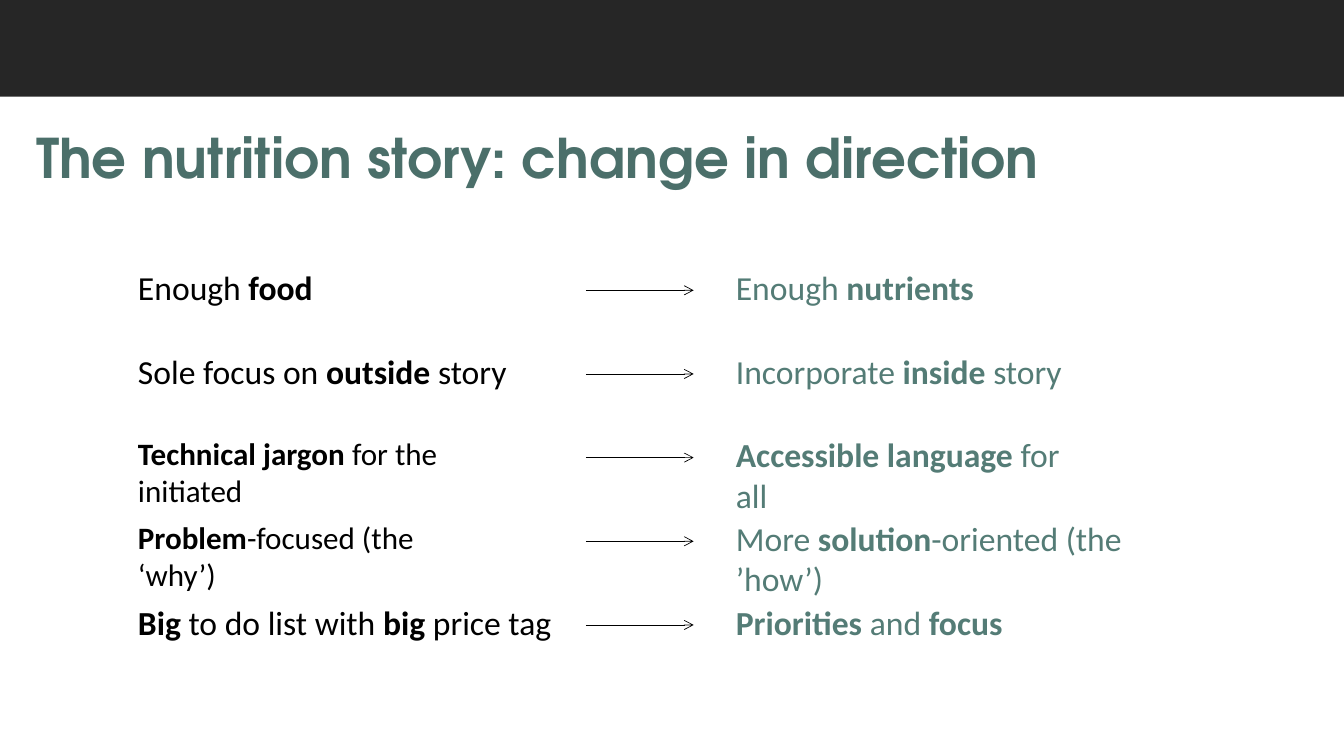
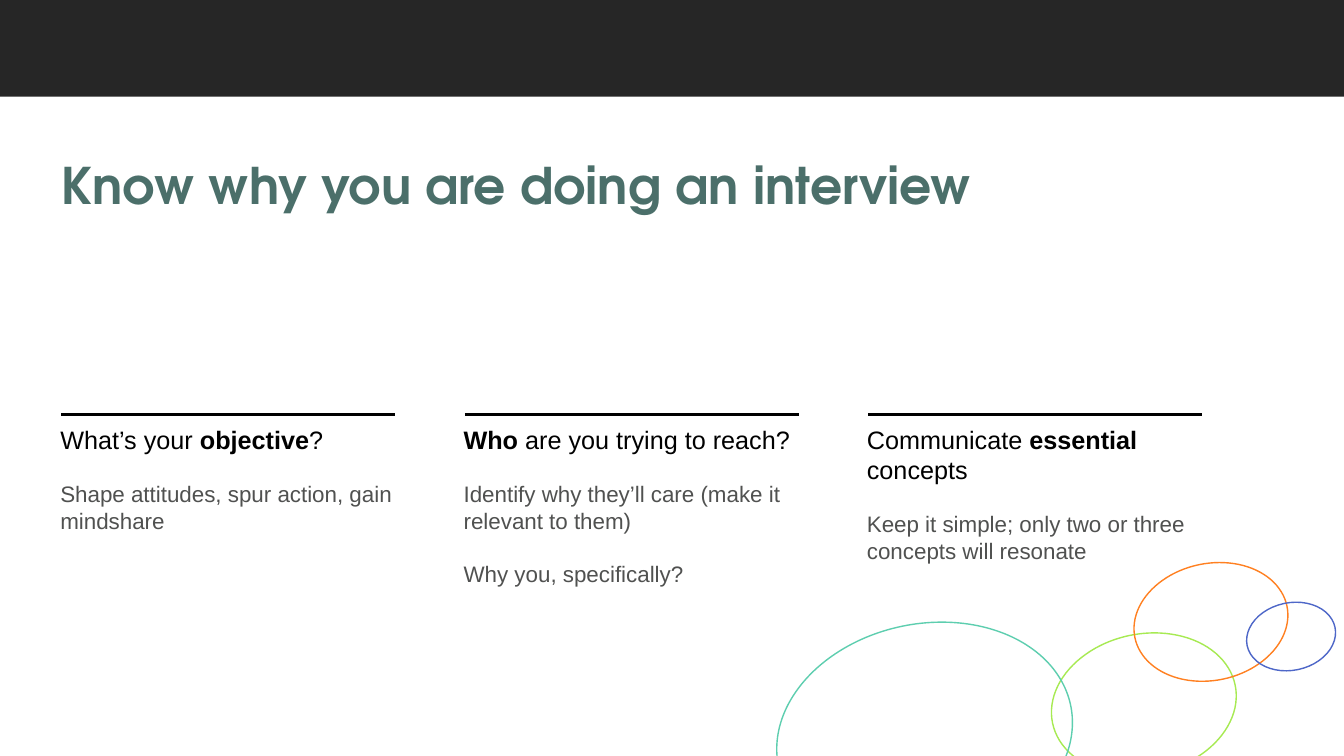
"""Build two slides on telling the nutrition story and preparing an interview."""
from lxml.etree import SubElement
from pptx import Presentation
from pptx.dml.color import RGBColor
from pptx.enum.shapes import MSO_CONNECTOR, MSO_SHAPE
from pptx.enum.text import MSO_ANCHOR, MSO_AUTO_SIZE, PP_ALIGN
from pptx.oxml.ns import qn
from pptx.util import Inches, Pt

BAND = RGBColor(0x26, 0x26, 0x26)
TITLE = RGBColor(0x4B, 0x6F, 0x6A)
BLACK = RGBColor(0x00, 0x00, 0x00)
TEAL = RGBColor(0x54, 0x7C, 0x76)
GREY = RGBColor(0x50, 0x51, 0x50)
GREEN = RGBColor(0xA7, 0xEA, 0x52)
ORANGE = RGBColor(0xFF, 0x80, 0x21)
BLUE = RGBColor(0x4E, 0x67, 0xC8)
MINT = RGBColor(0x5D, 0xCE, 0xAF)

TITLE_FONT, STORY_FONT, INTERVIEW_FONT = "TeX Gyre Adventor", "Calibri", "Arial"
SLIDE_W, SLIDE_H, BAND_H = 13.33, 7.5, 0.96

STORY_TITLE = "The nutrition story: change in direction"
# Each side: wording with **bold** parts, box width, text size.
STORY_SHIFTS = [
    (("Enough **food**", 4.71, 24), ("Enough **nutrients**", 4.6, 24)),
    (("Sole focus on **outside **story", 4.71, 24),
     ("Incorporate **inside **story", 4.6, 24)),
    (("**Technical jargon **for the initiated", 4.22, 22.2),
     ("**Accessible language **for all", 3.72, 24)),
    (("**Problem**-focused (the ‘why’)", 3.72, 22.2),
     ("More** solution**-oriented (the ’how’)", 4.6, 24)),
    (("**Big **to do list with** big **price tag", 4.44, 24),
     ("**Priorities **and** focus**", 3.72, 24)),
]
STORY_TOP, STORY_PITCH = 2.6, 0.83
BEFORE_LEFT, ARROW_LEFT, AFTER_LEFT = 1.27, 5.81, 7.2
ARROW_W, ARROW_DROP = 1.07, 0.28

INTERVIEW_TITLE = "Know why you are doing an interview"
INTERVIEW_COLUMNS = [
    ("What’s your **objective**?", ["Shape attitudes, spur action, gain mindshare"]),
    ("**Who** are you trying to reach?",
     ["Identify why they’ll care (make it relevant to them)", "Why you, specifically?"]),
    ("Communicate **essential **concepts",
     ["Keep it simple; only two or three concepts will resonate"]),
]
COLUMN_LEFT, COLUMN_PITCH, COLUMN_W, COLUMN_TOP = 0.5, 4.0, 3.74, 4.16
RULE_INDENT, RULE_W, RULE_Y = 0.11, 3.31, 4.11

RINGS = [
    (10.65, 6.06, 1.39, 1.85, GREEN),
    (11.43, 5.4, 1.16, 1.54, ORANGE),
    (12.47, 5.87, 0.67, 0.89, BLUE),
    (8.06, 5.82, 2.22, 2.96, MINT),
]
RING_TILT = 78.2


def add_band(slide):
    """Put the dark top band on the layout that all slides share."""
    band = slide.shapes.add_shape(
        MSO_SHAPE.RECTANGLE, 0, 0, Inches(SLIDE_W), Inches(BAND_H))
    band.shadow.inherit = False
    band.fill.solid()
    band.fill.fore_color.rgb = BAND
    band.line.fill.background()
    slide.slide_layout.shapes.element.insert(2, band.element)


def set_title(slide, wording, left, top, width, height, size):
    """Place the title and give it the shared style."""
    title = slide.shapes.title
    title.left, title.top = Inches(left), Inches(top)
    title.width, title.height = Inches(width), Inches(height)
    frame = title.text_frame
    frame.text = wording
    frame.word_wrap = True
    frame.auto_size = MSO_AUTO_SIZE.NONE
    frame.vertical_anchor = MSO_ANCHOR.MIDDLE
    paragraph = frame.paragraphs[0]
    paragraph.alignment = PP_ALIGN.LEFT
    paragraph.line_spacing = 0.9
    style(paragraph.runs[0].font, TITLE_FONT, size, TITLE, True)


def style(font, name, size, colour, bold=False):
    """Set the look of a run."""
    font.name, font.size, font.bold = name, Pt(size), bold
    font.color.rgb = colour


def add_text(slide, left, top, width, height):
    """Add a wrapping text box and return its frame."""
    frame = slide.shapes.add_textbox(
        Inches(left), Inches(top), Inches(width), Inches(height)).text_frame
    frame.word_wrap = True
    return frame


def write(paragraph, wording, name, size, colour):
    """Write wording whose parts between ** are bold."""
    for index, part in enumerate(wording.split("**")):
        if part:
            run = paragraph.add_run()
            run.text = part
            style(run.font, name, size, colour, index % 2 == 1)


def add_line(slide, left, y, width, weight, arrow=False):
    """Draw a level black line, with an open arrowhead if asked."""
    line = slide.shapes.add_connector(
        MSO_CONNECTOR.STRAIGHT, Inches(left), Inches(y), Inches(left + width), Inches(y))
    line.line.color.rgb = BLACK
    line.line.width = Pt(weight)
    properties = line.element.spPr
    if arrow:
        SubElement(properties.find(qn("a:ln")), qn("a:tailEnd"), type="arrow")
    SubElement(properties, qn("a:effectLst"))


def build_story(slide):
    """Show each shift in the story as before, arrow, after."""
    set_title(slide, STORY_TITLE, 0.26, 0.41, 13.36, 2.37, 39)
    for row, sides in enumerate(STORY_SHIFTS):
        top = STORY_TOP + row * STORY_PITCH
        for (wording, width, size), left, colour in zip(
                sides, (BEFORE_LEFT, AFTER_LEFT), (BLACK, TEAL)):
            frame = add_text(slide, left, top, width, 0.55)
            write(frame.paragraphs[0], wording, STORY_FONT, size, colour)
        add_line(slide, ARROW_LEFT, top + ARROW_DROP, ARROW_W, 0.5, arrow=True)


def build_interview(slide):
    """Show three ruled columns above a group of rings."""
    set_title(slide, INTERVIEW_TITLE, 0.51, 1.27, 11.41, 1.19, 36)
    for column, (heading, points) in enumerate(INTERVIEW_COLUMNS):
        left = COLUMN_LEFT + column * COLUMN_PITCH
        frame = add_text(slide, left, COLUMN_TOP, COLUMN_W, 1.8)
        write(frame.paragraphs[0], heading, INTERVIEW_FONT, 18, BLACK)
        for point in points:
            paragraph = frame.add_paragraph()
            paragraph.space_before = Pt(18.4)
            write(paragraph, point, INTERVIEW_FONT, 16, GREY)
        add_line(slide, left + RULE_INDENT, RULE_Y, RULE_W, 2.25)
    for left, top, width, height, colour in RINGS:
        ring = slide.shapes.add_shape(
            MSO_SHAPE.OVAL, Inches(left), Inches(top), Inches(width), Inches(height))
        ring.rotation = RING_TILT
        ring.shadow.inherit = False
        ring.fill.background()
        ring.line.color.rgb = colour
        ring.line.width = Pt(1)


def main():
    """Assemble and save the presentation."""
    deck = Presentation()
    deck.slide_width, deck.slide_height = Inches(SLIDE_W), Inches(SLIDE_H)
    title_only = deck.slide_layouts[5]
    story, interview = (deck.slides.add_slide(title_only) for _ in range(2))
    add_band(story)
    build_story(story)
    build_interview(interview)
    deck.save("out.pptx")


if __name__ == "__main__":
    main()
